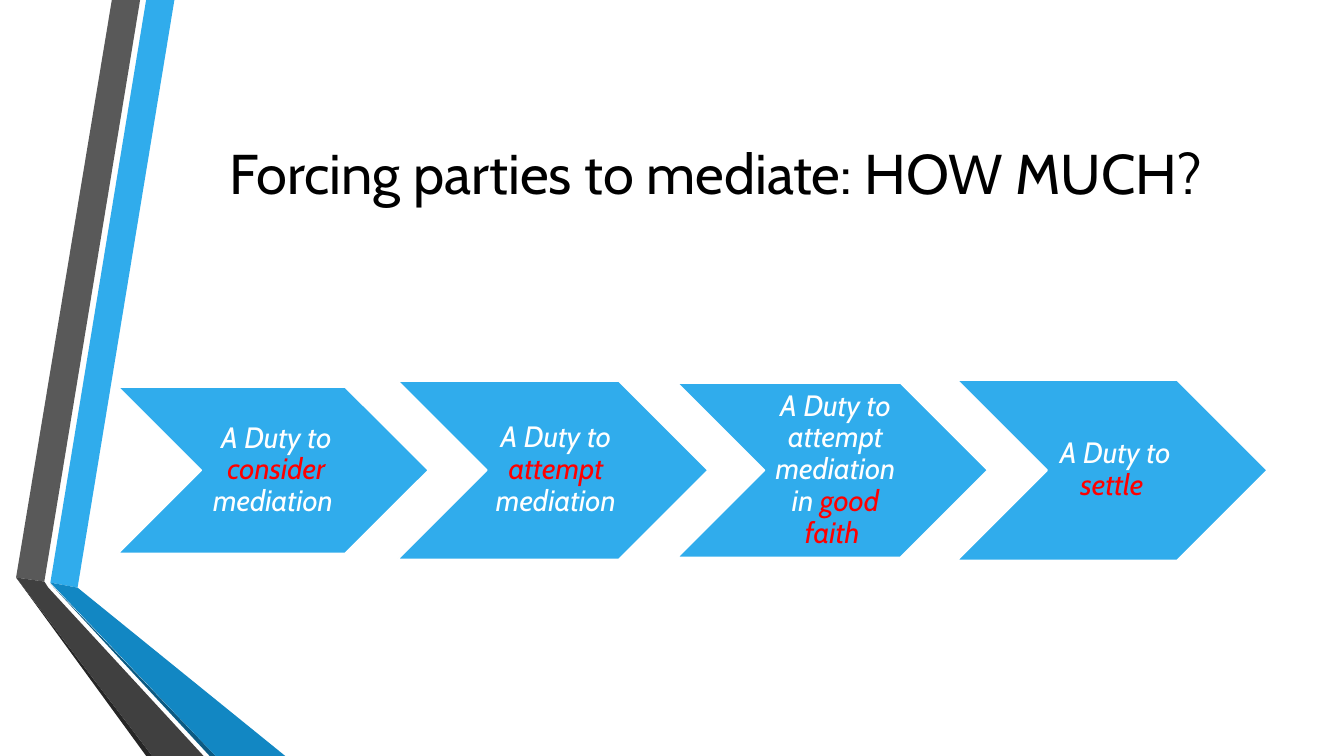
from collections import namedtuple

from pptx import Presentation
from pptx.dml.color import RGBColor
from pptx.enum.shapes import MSO_SHAPE
from pptx.enum.text import MSO_ANCHOR, MSO_AUTO_SIZE, PP_ALIGN
from pptx.util import Pt

PX = 9144
FONT = "Cabin"
CHEVRON = MSO_SHAPE.CHEVRON
MIDDLE = MSO_ANCHOR.MIDDLE
CENTER = PP_ALIGN.CENTER
NO_AUTOFIT = MSO_AUTO_SIZE.NONE
TITLE_ONLY = 5

COLORS = {
    "blue": "30ACEC",
    "deep_blue": "1287C3",
    "navy": "0C5A82",
    "gray": "595959",
    "charcoal": "404040",
    "soot": "262626",
    "white": "FFFFFF",
    "black": "000000",
    "red": "FF0000",
}

Box = namedtuple("Box", "left top width height")

PAGE = Box(0, 0, 1333, 750)
RIBBON_BOX = Box(16, 0, 267, 750)
TITLE_BOX = Box(162, 75, 1096, 192)
DUTY_BOX = Box(117, 377, 1140, 179)
CHEVRON_WIDTH = 308

RIBBONS = [
    ("blue", [(34, 578), (61, 583), (157, 0), (129, 0)]),
    ("gray", [(123, 0), (95, 0), (0, 573), (28, 577)]),
    ("soot", [(0, 573), (129, 750), (135, 750)]),
    ("navy", [(34, 579), (192, 750), (198, 750)]),
    ("deep_blue", [(34, 578), (198, 750), (267, 750), (61, 583)]),
    ("charcoal", [(186, 750), (32, 583), (28, 577), (0, 573), (135, 750)]),
]

DUTIES = [
    (165, [("A Duty to ", "white"), ("consider", "red"), (" mediation ", "white")]),
    (177, [("A Duty to ", "white"), ("attempt", "red"), (" mediation", "white")]),
    (173, [("A Duty to attempt mediation in ", "white"), ("good faith ", "red")]),
    (179, [("A Duty to ", "white"), ("settle ", "red")]),
]


def px(length):
    return round(length * PX)


def color(name):
    return RGBColor.from_string(COLORS[name])


def paint(shape, fill):
    shape.shadow.inherit = False
    shape.fill.solid()
    shape.fill.fore_color.rgb = color(fill)


def add_ribbons(page, box):
    for fill, points in RIBBONS:
        corners = [(box.left + x, box.top + y) for x, y in points]
        builder = page.shapes.build_freeform(*corners[0], scale=PX)
        builder.add_line_segments(corners[1:], close=True)
        ribbon = builder.convert_to_shape()
        paint(ribbon, fill)
        ribbon.line.fill.background()


def add_title(page, box, text):
    title = page.shapes.title
    title.left, title.top, title.width, title.height = map(px, box)
    frame = title.text_frame
    frame.text = text
    frame.word_wrap = True
    frame.auto_size = NO_AUTOFIT
    frame.vertical_anchor = MIDDLE
    para = frame.paragraphs[0]
    para.alignment = CENTER
    para.font.name = FONT
    para.font.size = Pt(40)
    para.font.color.rgb = color("black")


def add_chevron(page, box, spans):
    chevron = page.shapes.add_shape(CHEVRON, *map(px, box))
    paint(chevron, "blue")
    chevron.line.color.rgb = color("white")
    chevron.line.width = Pt(1.25)
    frame = chevron.text_frame
    frame.word_wrap = True
    frame.vertical_anchor = MIDDLE
    frame.margin_left = px(9)
    frame.margin_top = frame.margin_right = frame.margin_bottom = px(3)
    para = frame.paragraphs[0]
    para.alignment = CENTER
    para.line_spacing = 0.9
    para.font.name = FONT
    para.font.size = Pt(21)
    para.font.italic = True
    for text, ink in spans:
        span = para.add_run()
        span.text = text
        span.font.color.rgb = color(ink)


def add_duties(page, box):
    pitch = (box.width - CHEVRON_WIDTH) / (len(DUTIES) - 1)
    for index, (height, spans) in enumerate(DUTIES):
        left = box.left + index * pitch
        top = box.top + (box.height - height) / 2
        add_chevron(page, Box(left, top, CHEVRON_WIDTH, height), spans)


def main():
    deck = Presentation()
    deck.slide_width = px(PAGE.width)
    deck.slide_height = px(PAGE.height)
    page = deck.slides.add_slide(deck.slide_layouts[TITLE_ONLY])
    add_ribbons(page, RIBBON_BOX)
    add_title(page, TITLE_BOX, "Forcing parties to mediate: HOW MUCH?")
    add_duties(page, DUTY_BOX)
    deck.save("out.pptx")


if __name__ == "__main__":
    main()
